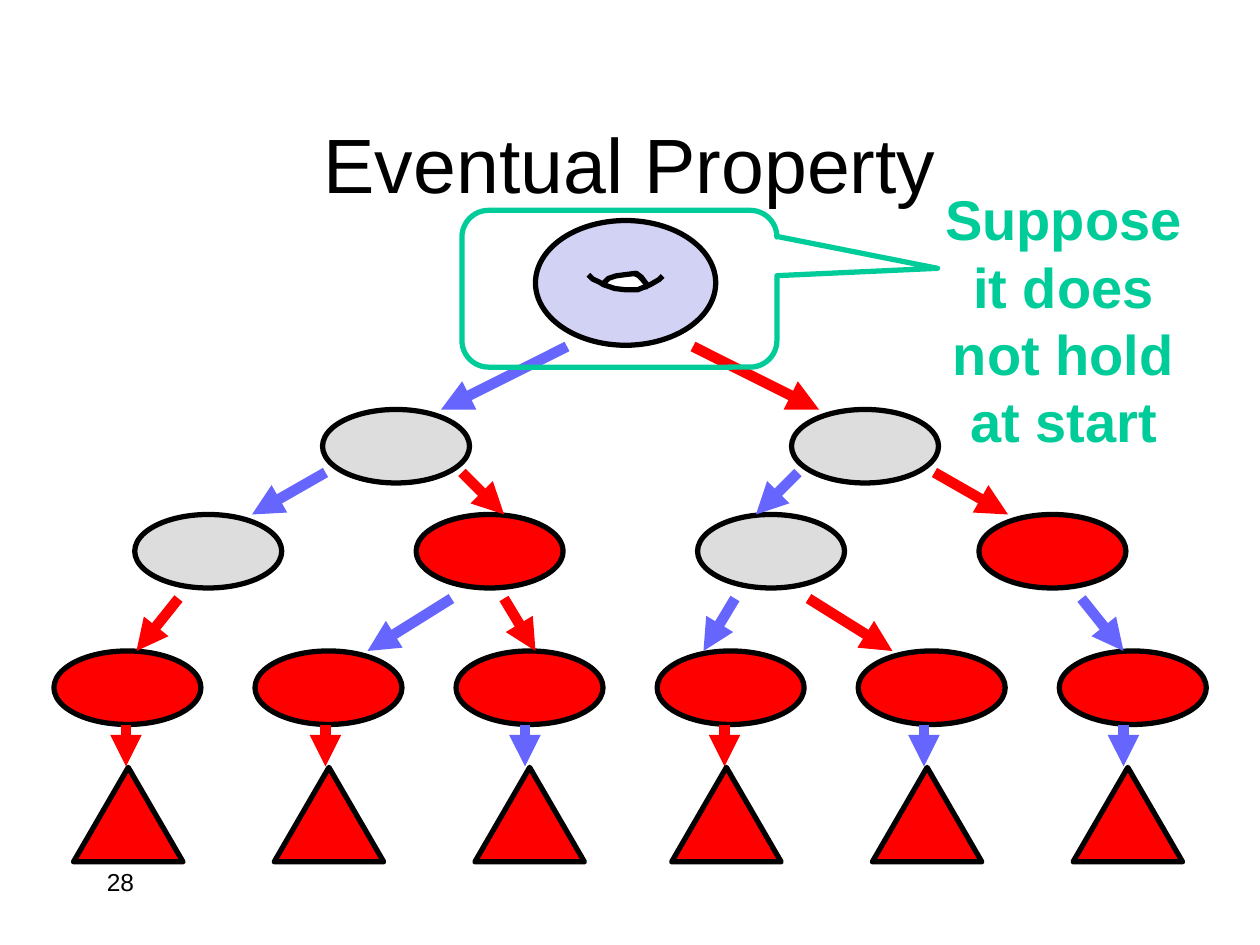
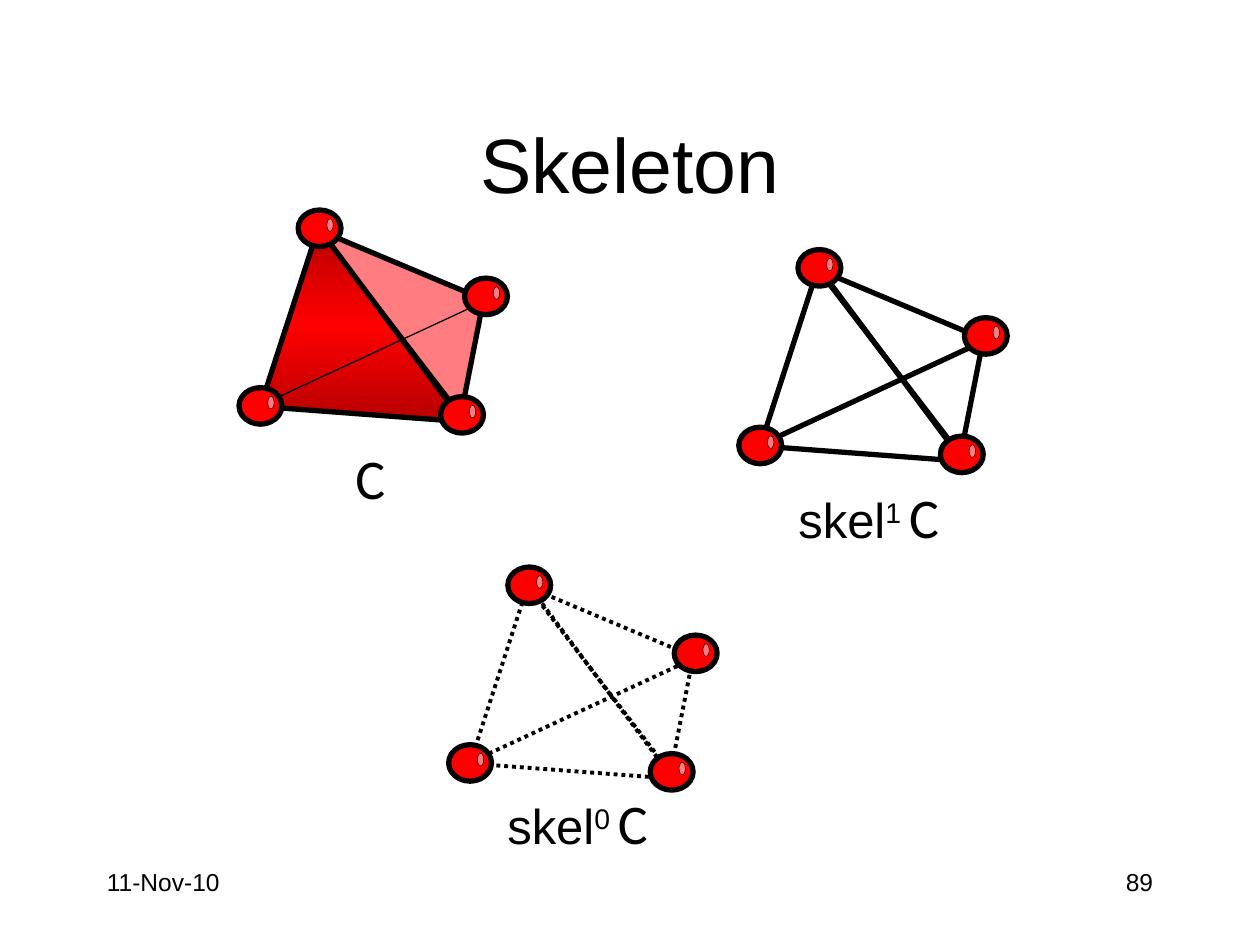
from copy import deepcopy

from pptx import Presentation
from pptx import util as u
from pptx.dml.color import RGBColor
from pptx.enum import dml, shapes, text
from pptx.oxml.ns import qn

COLORS = {
    "black": "000000", "white": "FFFFFF", "red": "FF0000", "dark_red": "B60000",
    "pink": "FF7C80", "gray": "DDDDDD", "blue": "6666FF", "lavender": "D2D2F4",
    "green": "00CC99",
}
ALIGN = text.PP_ALIGN
SHAPE = shapes.MSO_SHAPE
SLIDE_WIDTH, SLIDE_HEIGHT = 720, 540
FOOTER_TOP = 492
NODE_SIZE = (84, 42)
TRIANGLE_SIZE = (62.6, 54)
DOT_SIZE = (24.5, 20.9)

LIP_FILL = [(344.9, 162.7), (347.8, 164.2), (349.9, 164.9), (352.8, 165.6), (360, 166.3),
            (370.1, 164.9), (366.8, 161), (364.3, 158.4), (361.4, 157), (349.2, 158.4),
            (345.6, 159.8)]
UPPER_LIP = [(344.2, 162.7), (347.8, 159.1), (352.1, 157.7), (357.1, 157), (363.6, 156.2),
             (366.5, 158.4), (370.8, 164.2)]
LOWER_LIP = [(336.2, 157), (338.8, 159.5), (342.7, 161.3), (344.9, 162.7), (351.4, 164.9),
             (357.8, 165.6), (364.3, 165.6), (371.5, 162.7), (376.6, 159.8), (378.7, 157.7)]

BACK_FACE = [(45.4, 11.5), (126.7, 117.4), (139.7, 51.1)]
FRONT_FACE = [(45.4, 10.1), (128.2, 121), (12.2, 112.3)]
HIDDEN_EDGE = [(10.8, 112.3), (142.6, 51.1)]
VERTICES = [(33.8, 0), (115.2, 106.6), (0, 101.5), (128.9, 38.9)]


def color(name):
    return RGBColor.from_string(COLORS[name])


def points(*values):
    return [u.Pt(value) for value in values]


def shift(outline, origin):
    return [(x + origin[0], y + origin[1]) for x, y in outline]


def write(paragraph, content, size=14, font="Arial", fill="black", bold=False,
          align=None, baseline=0):
    run = paragraph.add_run()
    run.text = content
    run.font.size = u.Pt(size)
    run.font.name = font
    run.font.bold = bold
    run.font.color.rgb = color(fill)
    if align is not None:
        paragraph.alignment = align
    if baseline:
        run._r.get_or_add_rPr().set("baseline", str(baseline * 1000))


def add_text_box(slide, left, top, width, height, wrap=True, grow=False):
    box = slide.shapes.add_textbox(*points(left, top, width, height))
    frame = box.text_frame
    frame.word_wrap = wrap
    if grow:
        frame.auto_size = text.MSO_AUTO_SIZE.SHAPE_TO_FIT_TEXT
    return frame.paragraphs[0]


def add_titled_slide(presentation, title):
    slide = presentation.slides.add_slide(presentation.slide_layouts[5])
    shape = slide.shapes.title
    shape.left, shape.top, shape.width, shape.height = points(54, 48, 612, 90)
    shape.text_frame.vertical_anchor = text.MSO_ANCHOR.MIDDLE
    write(shape.text_frame.paragraphs[0], title, size=44, align=ALIGN.CENTER)
    return slide


def add_footer(slide, content, left=54, align=ALIGN.LEFT):
    write(add_text_box(slide, left, FOOTER_TOP, 150, 36), content, align=align)


def style_line(line, name, width, dash=None):
    line.color.rgb = color(name)
    line.width = u.Pt(width)
    if dash is not None:
        line.dash_style = dash


def style_shape(shape, fill, line="black", width=3, dash=None):
    shape.shadow.inherit = False
    if fill:
        shape.fill.solid()
        shape.fill.fore_color.rgb = color(fill)
    else:
        shape.fill.background()
    style_line(shape.line, line, width, dash)
    return shape


def add_shape(slide, kind, position, size, fill, **line_format):
    shape = slide.shapes.add_shape(kind, *points(*position, *size))
    return style_shape(shape, fill, **line_format)


def add_outline(slide, outline, fill=None, closed=True, **line_format):
    start, *rest = [points(*point) for point in outline]
    builder = slide.shapes.build_freeform(*start)
    builder.add_line_segments(rest, close=closed)
    return style_shape(builder.convert_to_shape(), fill, **line_format)


def add_line(slide, start, end, name, width, dash=None, arrow=False):
    connector = slide.shapes.add_connector(
        shapes.MSO_CONNECTOR.STRAIGHT, *points(*start, *end))
    style_line(connector.line, name, width, dash)
    if arrow:
        tail = connector.line._get_or_add_ln().makeelement(qn("a:tailEnd"), {"type": "triangle"})
        connector.line._get_or_add_ln().append(tail)
    properties = connector._element.spPr
    properties.append(properties.makeelement(qn("a:effectLst"), {}))


def add_arrow(slide, start, end, name):
    add_line(slide, start, end, name, 6, arrow=True)


def fill_gradient(shape, names):
    shape.fill.gradient()
    shape.fill.gradient_angle = 90
    stop_list = shape._element.find(".//" + qn("a:gsLst"))
    middle = deepcopy(stop_list[0])
    middle.set("pos", "50000")
    stop_list.insert(1, middle)
    for stop, name in zip(shape.fill.gradient_stops, names):
        stop.color.rgb = color(name)


def add_node_row(slide, left, step, top, fills):
    for index, fill in enumerate(fills):
        add_shape(slide, SHAPE.OVAL, (left + step * index, top), NODE_SIZE, fill)


def add_tree(slide):
    add_node_row(slide, 184.3, 268, 234, ["gray", "gray"])
    add_node_row(slide, 77, 160.8, 294, ["gray", "red", "gray", "red"])
    add_node_row(slide, 30.8, 114.9, 372, ["red"] * 6)

    opposite = {"blue": "red", "red": "blue"}
    mirrored_arrows = [
        ((186, 270), (144, 294), "blue"), ((264, 270), (288, 294), "red"),
        ((102, 342), (78, 372), "red"), ((258, 342), (210, 372), "blue"),
        ((324, 198), (252, 234), "blue"),
    ]
    for start, end, name in mirrored_arrows:
        add_arrow(slide, start, end, name)
        add_arrow(slide, (SLIDE_WIDTH - start[0], start[1]),
                  (SLIDE_WIDTH - end[0], end[1]), opposite[name])
    add_arrow(slide, (288, 342), (306, 372), "red")
    add_arrow(slide, (420, 342), (402, 372), "blue")
    for index, name in enumerate(["red", "red", "blue", "red", "blue", "blue"]):
        x = 72 + 114 * index
        add_arrow(slide, (x, 414), (x, 438), name)


def add_root(slide):
    add_shape(slide, SHAPE.OVAL, (306, 126), (103, 71.3), "lavender")
    add_outline(slide, LIP_FILL, fill="white", width=0.75)
    for lip in (UPPER_LIP, LOWER_LIP):
        add_outline(slide, lip, closed=False)


def add_triangles(slide):
    for left in (42, 383.8):
        for index in range(3):
            add_shape(slide, SHAPE.ISOSCELES_TRIANGLE, (left + 114.7 * index, 438.5),
                      TRIANGLE_SIZE, "red")


def add_callout(slide):
    callout = add_shape(slide, SHAPE.ROUNDED_RECTANGULAR_CALLOUT, (264, 120.2),
                        (180, 89.6), None, line="green")
    for index, value in enumerate((1.01, -0.13, 0.17)):
        callout.adjustments[index] = value
    write(add_text_box(slide, 525.6, 102.2, 164.2, 162.7, grow=True),
          "Suppose it does not hold at start",
          size=32, fill="green", bold=True, align=ALIGN.CENTER)


def add_vertex(slide, position):
    add_shape(slide, SHAPE.OVAL, position, DOT_SIZE, "red")
    glint = (position[0] + 16.4, position[1] + 5)
    add_shape(slide, SHAPE.OVAL, glint, (3.6, 7.2), "pink", width=0.25)


def add_tetrahedron(slide, origin, solid=False, width=3.0, hidden_width=3.0, dash=None):
    add_outline(slide, shift(BACK_FACE, origin), fill="pink" if solid else None,
                width=width, dash=dash)
    front = add_outline(slide, shift(FRONT_FACE, origin), width=width, dash=dash)
    if solid:
        fill_gradient(front, ["dark_red", "red", "dark_red"])
    vertices = shift(VERTICES, origin)
    for vertex in vertices[:2]:
        add_vertex(slide, vertex)
    add_line(slide, *shift(HIDDEN_EDGE, origin), "black", hidden_width, dash)
    for vertex in vertices[2:]:
        add_vertex(slide, vertex)


def add_complex_label(slide, left, top, width, dimension=None):
    paragraph = add_text_box(slide, left, top, width, 46, wrap=False, grow=True)
    if dimension is not None:
        write(paragraph, "skel", size=28)
        write(paragraph, f"{dimension} ", size=28, baseline=30)
    write(paragraph, "C", size=32, font="Calibri", align=ALIGN.CENTER)


def build_eventual_property(presentation):
    slide = add_titled_slide(presentation, "Eventual Property")
    add_footer(slide, "28")
    add_tree(slide)
    add_root(slide)
    add_triangles(slide)
    add_callout(slide)


def build_skeleton(presentation):
    slide = add_titled_slide(presentation, "Skeleton")
    add_footer(slide, "11-Nov-10")
    add_footer(slide, "89", left=516, align=ALIGN.RIGHT)
    add_tetrahedron(slide, (136.6, 120), solid=True, hidden_width=0.75)
    add_tetrahedron(slide, (422.2, 142.6))
    add_tetrahedron(slide, (256.4, 324), width=2.25, hidden_width=2.25,
                    dash=dml.MSO_LINE.ROUND_DOT)
    add_complex_label(slide, 195.8, 249.8, 31.7)
    add_complex_label(slide, 446.4, 272.2, 100, dimension=1)
    add_complex_label(slide, 280.1, 447.1, 100, dimension=0)


def main():
    presentation = Presentation()
    presentation.slide_width, presentation.slide_height = points(SLIDE_WIDTH, SLIDE_HEIGHT)
    build_eventual_property(presentation)
    build_skeleton(presentation)
    presentation.save("out.pptx")


if __name__ == "__main__":
    main()
